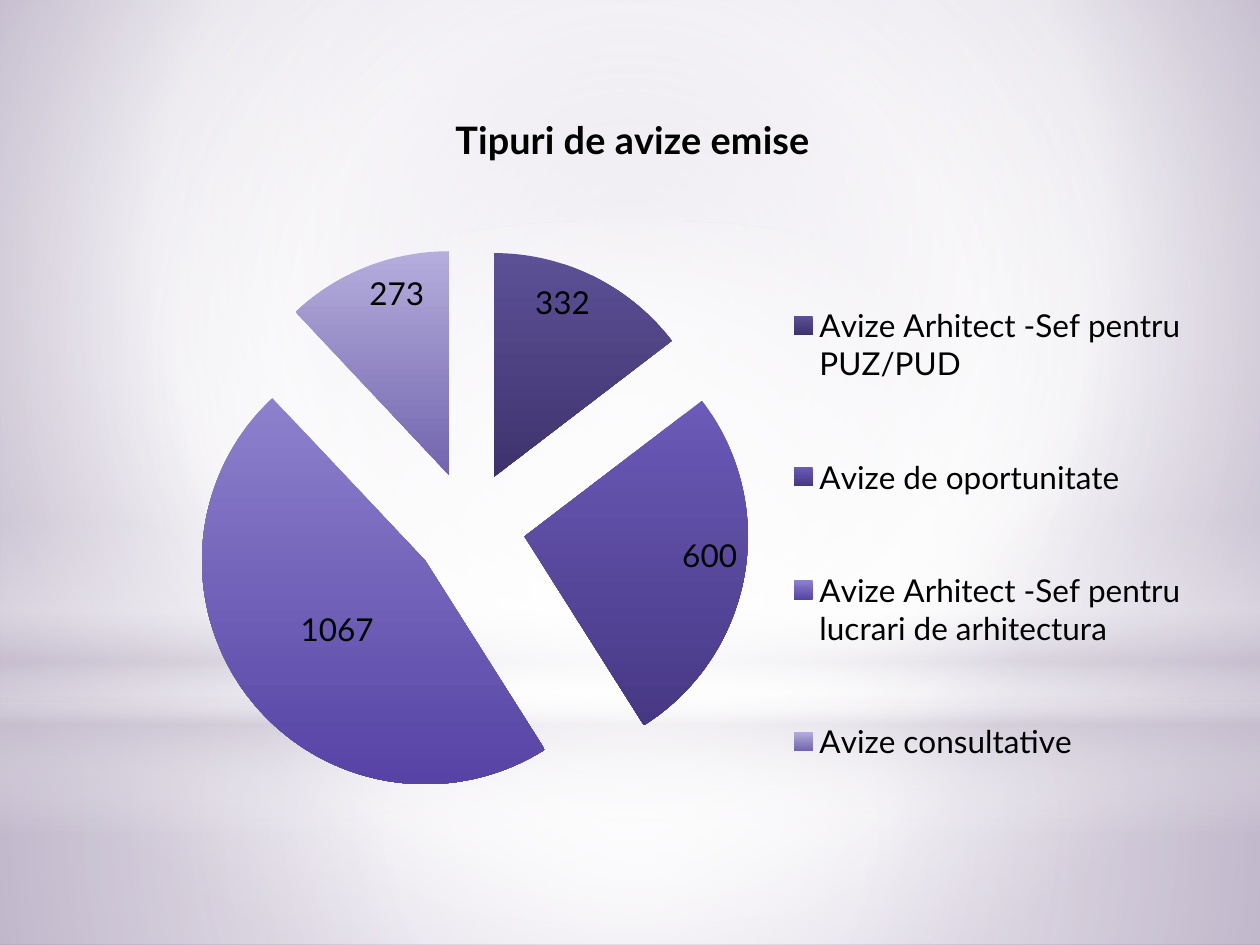
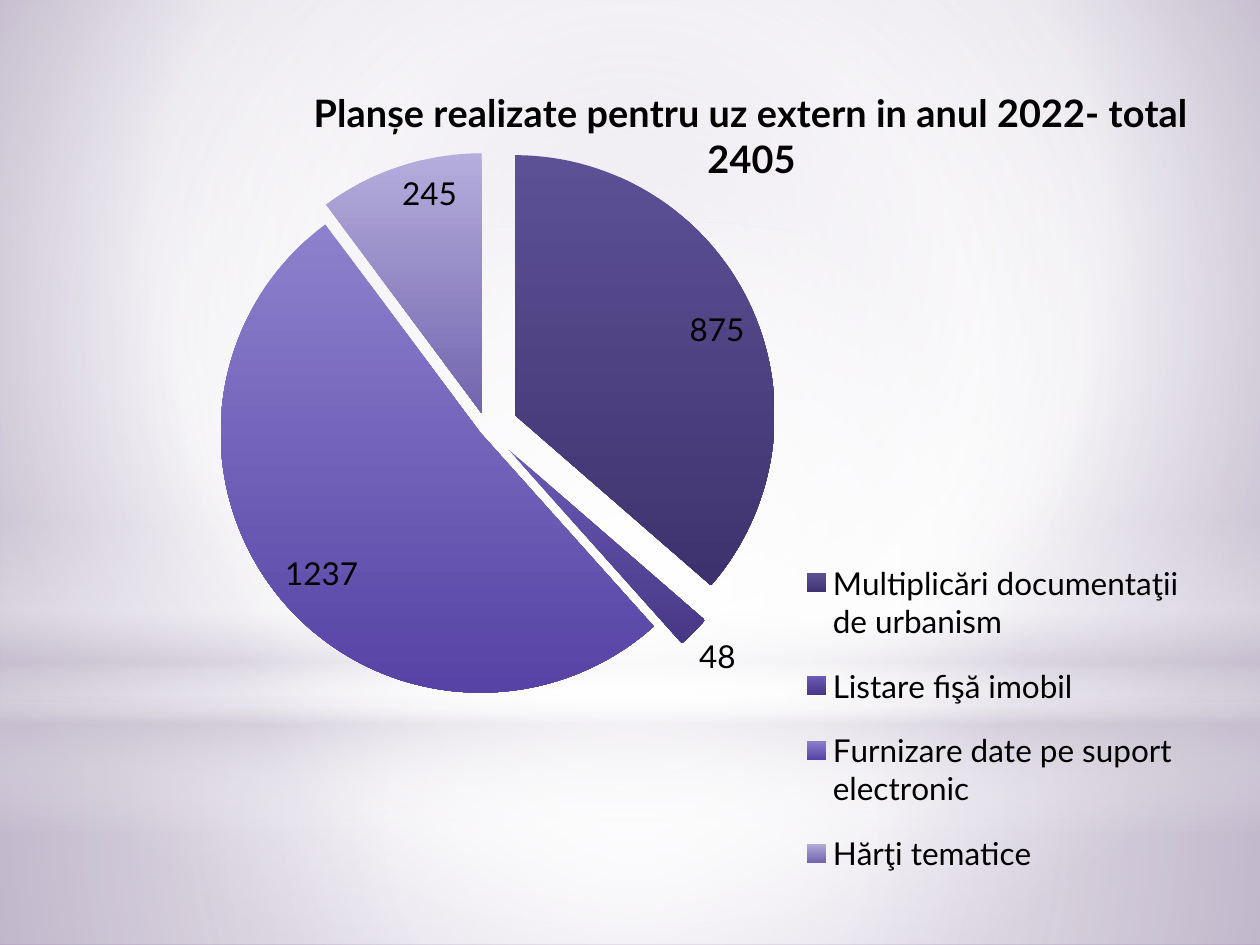
import pptx
import pptx.chart.data
import pptx.dml.color
import pptx.enum.chart
import pptx.enum.shapes
import pptx.oxml
import pptx.oxml.ns
import pptx.util

Pt = pptx.util.Pt
RGB = pptx.dml.color.RGBColor
SHAPE = pptx.enum.shapes.MSO_SHAPE
LABEL = pptx.enum.chart.XL_LABEL_POSITION
qn = pptx.oxml.ns.qn

# Shared style
FONT = "Lato"
BODY_SIZE, TITLE_SIZE = 18, 21.6
BLACK = RGB(0x00, 0x00, 0x00)
WHITE = RGB(0xFF, 0xFF, 0xFF)
LILAC = RGB(0xC9, 0xC2, 0xD1)
MAUVE = RGB(0xC1, 0xB7, 0xCD)
PLUM = RGB(0xA1, 0x91, 0xB5)
SLICE_COLOURS = [
    (RGB(0x5D, 0x51, 0x96), RGB(0x3E, 0x32, 0x6E)),
    (RGB(0x6B, 0x5A, 0xB7), RGB(0x47, 0x38, 0x85)),
    (RGB(0x8D, 0x81, 0xCD), RGB(0x56, 0x43, 0xA5)),
    (RGB(0xB5, 0xAD, 0xDC), RGB(0x72, 0x65, 0xAE)),
]
CENTRE = (50, 50, 50, 50)

# Backdrop layers: shape, box, (position, colour, opacity) stops, focus of a round gradient
BACKDROP = [
    (SHAPE.RECTANGLE, (0, 402, 720, 138),
     [(0, WHITE, 91), (37, WHITE, 76), (100, LILAC, 79)], CENTRE),
    (SHAPE.RECTANGLE, (0, 0, 720, 402),
     [(0, WHITE, 89), (48, WHITE, 62), (100, LILAC, 79)], CENTRE),
    (SHAPE.RECTANGLE, (0, 297, 720, 180),
     [(0, WHITE, 0), (29, WHITE, 30), (45, LILAC, 40),
      (55, WHITE, 26), (65, LILAC, 60), (100, WHITE, 0)], None),
    (SHAPE.OVAL, (0, 126, 720, 402), [(0, WHITE, 100), (56, WHITE, 0)], CENTRE),
]


def set_gradient(fill, owner, stops, focus=None):
    """Give the fill inside owner many stops; round with a focus, else top to bottom."""
    fill.gradient()
    old = next(owner.iter(qn("a:gradFill")))
    stop_xml = "".join(
        f'<a:gs pos="{pos * 1000}"><a:srgbClr val="{colour}">'
        f'<a:alpha val="{opacity * 1000}"/></a:srgbClr></a:gs>'
        for pos, colour, opacity in stops)
    if focus:
        sides = " ".join(f'{side}="{value * 1000}"' for side, value in zip("ltrb", focus))
        direction = f'<a:path path="circle"><a:fillToRect {sides}/></a:path>'
    else:
        direction = '<a:lin ang="5400000" scaled="0"/>'
    new = pptx.oxml.parse_xml(
        f'<a:gradFill {pptx.oxml.ns.nsdecls("a")} rotWithShape="1">'
        f'<a:gsLst>{stop_xml}</a:gsLst>{direction}</a:gradFill>')
    old.getparent().replace(old, new)


def place(part, box, after=None, inner=False):
    """Place a chart part by fractions of the chart: x, y and perhaps w, h."""
    for old in part.findall(qn("c:layout")):
        part.remove(old)
    target = '<c:layoutTarget val="inner"/>' if inner else ""
    modes = '<c:xMode val="edge"/><c:yMode val="edge"/>'
    values = "".join(f'<c:{key} val="{value}"/>' for key, value in zip("xywh", box))
    layout = pptx.oxml.parse_xml(
        f'<c:layout {pptx.oxml.ns.nsdecls("c")}>'
        f'<c:manualLayout>{target}{modes}{values}</c:manualLayout></c:layout>')
    if after:
        part.find(qn(after)).addnext(layout)
    else:
        part.insert(0, layout)


def format_font(font, size=BODY_SIZE, bold=False, colour=BLACK):
    font.name, font.size, font.bold = FONT, Pt(size), bold
    font.color.rgb = colour


def write(frame, text, **style):
    frame.text = text
    format_font(frame.paragraphs[0].runs[0].font, **style)


class Deck:
    def __init__(self):
        self.prs = pptx.Presentation()
        self.prs.slide_width, self.prs.slide_height = Pt(720), Pt(540)
        master = self.prs.slide_master
        set_gradient(master.background.fill, master.element,
                     [(0, MAUVE, 100), (60, WHITE, 100), (100, PLUM, 100)],
                     (20, 10, 20, 60))
        self.slide = None

    def new_slide(self):
        self.slide = self.prs.slides.add_slide(self.prs.slide_layouts[6])
        for kind, box, stops, focus in BACKDROP:
            self.layer(kind, box, stops, focus)

    def layer(self, kind, box, stops, focus):
        layer = self.slide.shapes.add_shape(kind, *map(Pt, box))
        layer.shadow.inherit = False
        layer.line.fill.background()
        set_gradient(layer.fill, layer.element.spPr, stops, focus)

    def pie(self, box, title, counts, explosions, label_places,
            title_at, plot_box, legend_box):
        data = pptx.chart.data.CategoryChartData()
        data.categories = list(counts)
        data.add_series("Series 1", list(counts.values()))
        chart = self.slide.shapes.add_chart(
            pptx.enum.chart.XL_CHART_TYPE.PIE, *map(Pt, box), data).chart
        format_font(chart.font)

        # Title, legend and plot area
        chart.has_title = True
        write(chart.chart_title.text_frame, title, size=TITLE_SIZE, bold=True)
        chart.has_legend = True
        chart.legend.position = pptx.enum.chart.XL_LEGEND_POSITION.RIGHT
        chart.legend.include_in_layout = True
        format_font(chart.legend.font)
        root = chart.element
        place(next(root.iter(qn("c:title"))), title_at, after="c:tx")
        place(next(root.iter(qn("c:legend"))), legend_box, after="c:legendPos")
        place(next(root.iter(qn("c:plotArea"))), plot_box, inner=True)

        # Slices and their values
        plot = chart.plots[0]
        plot.vary_by_categories = True
        plot.has_data_labels = True
        plot.data_labels.show_value = True
        plot.data_labels.show_percentage = False
        format_font(plot.data_labels.font)
        points = plot.series[0].points
        for index, (top, bottom) in enumerate(SLICE_COLOURS):
            fill = points[index].format.fill
            fill.gradient()
            fill.gradient_angle = 270
            for stop, colour in zip(fill.gradient_stops, (top, bottom)):
                stop.color.rgb = colour
            label = points[index].data_label
            format_font(label.font)
            label.position = label_places[index]
        for slice_xml, distance in zip(root.iter(qn("c:dPt")), explosions):
            explosion = pptx.oxml.parse_xml(
                f'<c:explosion {pptx.oxml.ns.nsdecls("c")} val="{distance}"/>')
            slice_xml.find(qn("c:spPr")).addprevious(explosion)


def main():
    deck = Deck()

    # Types of approvals issued
    deck.new_slide()
    deck.pie(
        (36, 36, 648, 480), "Tipuri de avize emise",
        {"Avize Arhitect -Sef pentru PUZ/PUD": 332,
         "Avize de oportunitate": 600,
         "Avize Arhitect -Sef pentru lucrari de arhitectura": 1067,
         "Avize consultative": 273},
        explosions=[25] * 4,
        label_places=[LABEL.INSIDE_END, LABEL.INSIDE_END, LABEL.CENTER, LABEL.INSIDE_END],
        title_at=(0.34, 0.05), plot_box=(0.063, 0.286, 0.591, 0.532),
        legend_box=(0.635, 0.2, 0.36, 0.72))

    # Sheets made for outside use
    deck.new_slide()
    deck.pie(
        (36, 30, 648, 486), "Planșe realizate pentru uz extern in anul 2022- total 2405",
        {"Multiplicări documentaţii de urbanism": 875,
         "Listare fişă imobil": 48,
         "Furnizare date pe suport electronic": 1237,
         "Hărţi tematice": 245},
        explosions=[12, 12, 3, 6],
        label_places=[LABEL.INSIDE_END, LABEL.OUTSIDE_END, LABEL.INSIDE_END, LABEL.INSIDE_END],
        title_at=(0.215, 0.03), plot_box=(0.071, 0.136, 0.605, 0.611),
        legend_box=(0.645, 0.57, 0.35, 0.425))

    deck.prs.save("out.pptx")


if __name__ == "__main__":
    main()
